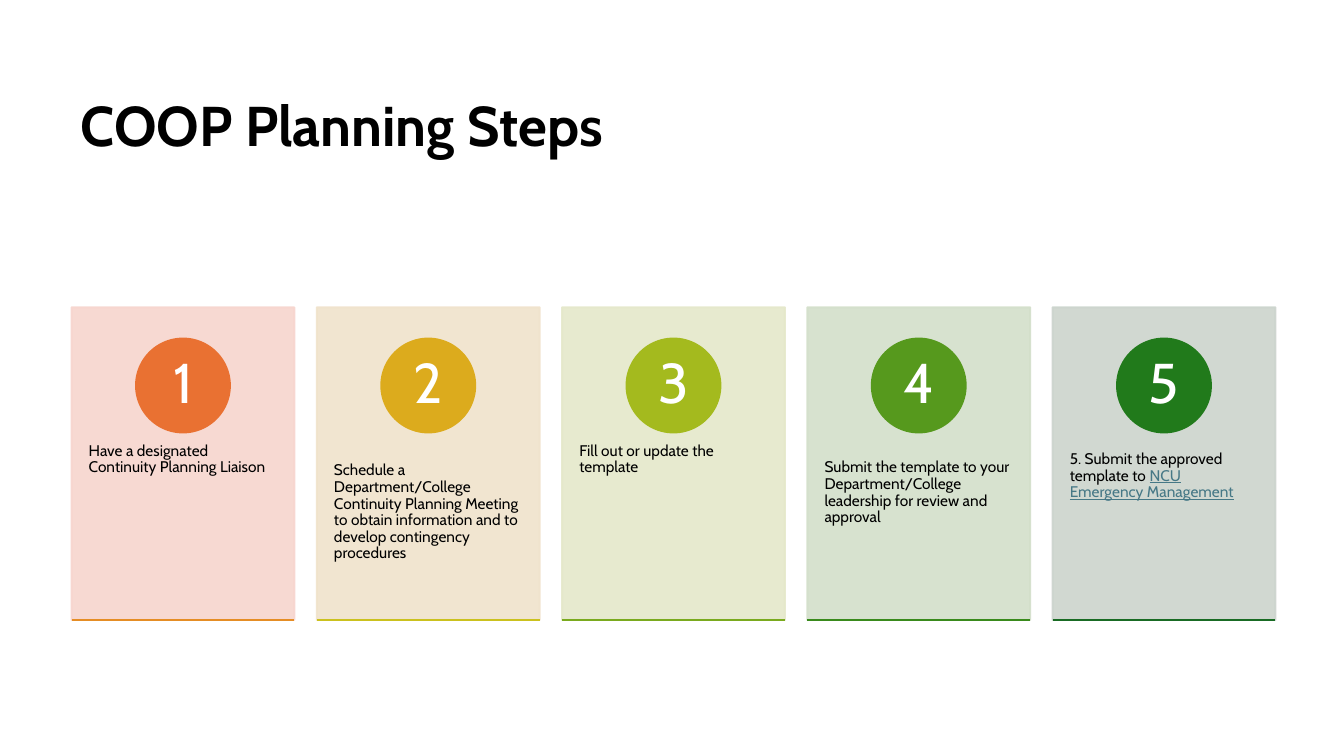
from dataclasses import dataclass
from lxml import etree
from pptx import Presentation
from pptx import util as u
from pptx.dml.color import RGBColor
from pptx.enum import shapes, text
from pptx.oxml.ns import qn


@dataclass(frozen=True)
class Theme:
    font: str = "Cabin"
    ink: str = "000000"
    white: str = "FFFFFF"
    link: str = "467886"
    big: int = 40
    small: int = 11
    line: float = 1.5
    alpha: int = 90


T = Theme()
WIDE, HIGH = 13.33, 7.5
LEFT, TOP, STEP = 0.71, 3.05, 2.4325
CARD_W, CARD_H = 2.21, 3.1
DISC = 0.93

STEPS = [
    ("F7D5CE", "E97132", "E58D25",
     [("Have a designated Continuity Planning Liaison", {})]),
    ("F0E3CB", "DCAB1D", "CBC11E",
     [("Schedule a Department/College Continuity Planning Meeting to obtain "
       "information and to develop contingency procedures", {})]),
    ("E5E8CA", "A4BA1E", "7AAA1E",
     [("Fill out or update the template", {})]),
    ("D3DFCA", "56991D", "398A1C",
     [("Submit the template to your Department/College leadership for review "
       "and approval", {})]),
    ("CCD4CD", "217A1B", "196B24",
     [("5. Submit the approved template to ", {}),
      ("NCU Emergency Management", {"color": T.link, "underline": True})]),
]


def rgb(code):
    return RGBColor.from_string(code)


def place(*box):
    return [u.Inches(v) for v in box]


def write(shape, runs, size, color, pad, align, anchor, bold=False, after=0):
    frame = shape.text_frame
    sides = ("margin_left", "margin_top", "margin_right", "margin_bottom")
    look = dict(zip(sides, place(*pad)), word_wrap=True, vertical_anchor=anchor)
    for key, val in look.items():
        setattr(frame, key, val)
    para = frame.paragraphs[0]
    form = {"alignment": align, "line_spacing": 0.9, "space_after": u.Pt(after)}
    for key, val in form.items():
        setattr(para, key, val)
    for words, extra in runs:
        run = para.add_run()
        run.text = words
        face = {"name": T.font, "size": u.Pt(size), "bold": bold,
                "underline": extra.get("underline")}
        for key, val in face.items():
            setattr(run.font, key, val)
        run.font.color.rgb = rgb(extra.get("color", color))


def solid(slide, kind, box, color, alpha=100):
    shape = slide.shapes.add_shape(kind, *place(*box))
    shape.shadow.inherit = False
    shape.line.width = u.Pt(T.line)
    for fill in (shape.fill, shape.line.fill):
        fill.solid()
        fill.fore_color.rgb = rgb(color)
    if alpha < 100:
        for tint in shape._element.spPr.iter(qn("a:srgbClr")):
            etree.SubElement(tint, qn("a:alpha"), val=str(alpha * 1000))
    return shape


def rule(slide, x, y, w, color):
    line = slide.shapes.add_connector(
        shapes.MSO_CONNECTOR.STRAIGHT, *place(x, y, x + w, y))
    line.line.color.rgb = rgb(color)
    line.line.width = u.Pt(T.line)
    etree.SubElement(line._element.spPr, qn("a:effectLst"))


def title(slide, box, words):
    head = slide.shapes.add_textbox(*place(*box))
    write(head, [(words, {})], T.big, T.ink, (0.1, 0.05, 0.1, 0.05),
          text.PP_ALIGN.LEFT, text.MSO_ANCHOR.MIDDLE, bold=True)


def card(slide, box, num, pale, deep, edge, runs):
    x, y, w, h = box
    kind = shapes.MSO_SHAPE
    solid(slide, kind.RECTANGLE, box, pale, T.alpha)
    body = slide.shapes.add_textbox(*place(x, y + 0.38 * h, w, 0.6 * h))
    write(body, runs, T.small, T.ink, (0.17, 0.36, 0.17, 0.36),
          text.PP_ALIGN.LEFT, text.MSO_ANCHOR.TOP, after=4)
    disc = solid(slide, kind.OVAL,
                 (x + (w - DISC) / 2, y + 0.1 * h, DISC, DISC), deep)
    write(disc, [(str(num), {})], T.big, T.white, (0.07, 0.01, 0.07, 0.01),
          text.PP_ALIGN.CENTER, text.MSO_ANCHOR.MIDDLE)
    rule(slide, x, y + h, w, edge)


def main():
    deck = Presentation()
    deck.slide_width, deck.slide_height = place(WIDE, HIGH)
    slide = deck.slides.add_slide(deck.slide_layouts[6])
    title(slide, (0.7, 0.79, 11.66, 0.96), "COOP Planning Steps")
    for i, step in enumerate(STEPS):
        card(slide, (LEFT + i * STEP, TOP, CARD_W, CARD_H), i + 1, *step)
    deck.save("out.pptx")


if __name__ == "__main__":
    main()
